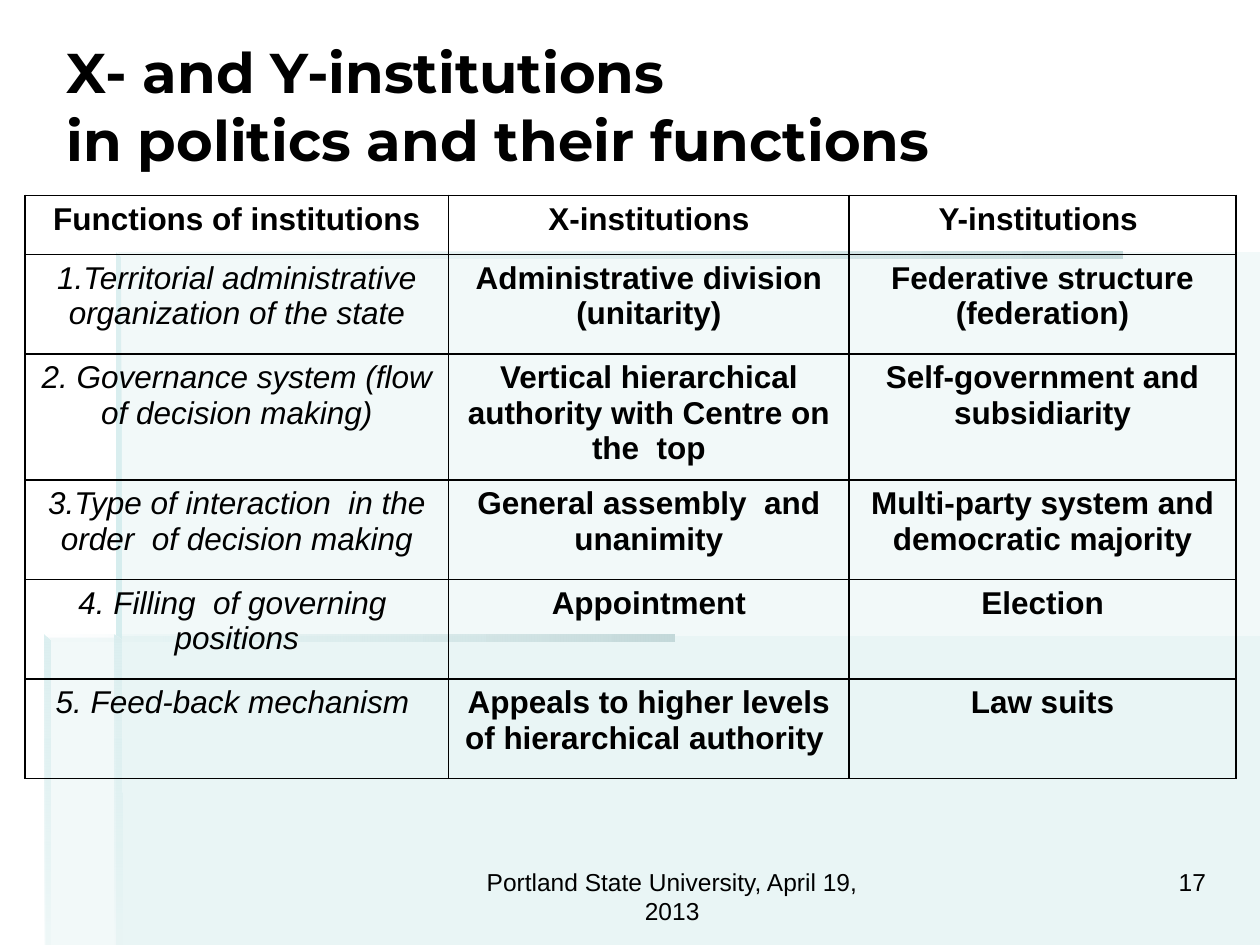
from dataclasses import dataclass

from lxml import etree
from pptx import Presentation
from pptx.dml.color import RGBColor
from pptx.enum.text import MSO_ANCHOR, PP_ALIGN
from pptx.oxml.ns import qn
from pptx.util import Inches, Pt

LEFT, CENTER, RIGHT = PP_ALIGN.LEFT, PP_ALIGN.CENTER, PP_ALIGN.RIGHT
TOP, MIDDLE = MSO_ANCHOR.TOP, MSO_ANCHOR.MIDDLE
WIDTH, HEIGHT = Inches(10), Inches(7.5)


@dataclass(frozen=True)
class Theme:
    ink: str = "000000"
    mist: str = "D6EDEE"
    pale: str = "DCEFF0"
    steel: str = "C4D9DA"
    title_font: str = "Montserrat"
    body_font: str = "Arial"
    title_size: int = 32
    table_size: int = 18
    footer_size: int = 14
    border: int = 1


THEME = Theme()
RIGHTWARD, DOWNWARD = 0, 270

COLUMNS = (33.6, 31.8, 30.7)
HEADER_ROW, BODY_ROW = 6.27, 10.53
ROWS = (
    ("Functions of institutions", "X-institutions", "Y-institutions "),
    ("1.Territorial administrative organization of the state",
     "Administrative division (unitarity)",
     "Federative structure (federation)"),
    ("2. Governance system (flow of decision making)",
     "Vertical hierarchical authority with Centre on the  top",
     "Self-government and subsidiarity"),
    ("3.Type of interaction  in the order  of decision making",
     "General assembly  and unanimity",
     "Multi-party system and democratic majority"),
    ("4. Filling  of governing  positions", "Appointment", "Election"),
    ("5. Feed-back mechanism ",
     "Appeals to higher levels of hierarchical authority ",
     "Law suits"),
)


def across(percent):
    return round(WIDTH * percent / 100)


def down(percent):
    return round(HEIGHT * percent / 100)


def box(x, y, w, h):
    return across(x), down(y), across(w), down(h)


def rectangle(x1, y1, x2, y2):
    return (x1, y1), (x1, y2), (x2, y2), (x2, y1)


def add_polygon(slide, points, colors, opacities, angle=RIGHTWARD):
    """Draw an outline-free shape; two colours make a gradient."""
    start, *rest = [(across(x), down(y)) for x, y in points]
    builder = slide.shapes.build_freeform(*start)
    builder.add_line_segments(rest, close=True)
    sp = builder.convert_to_shape()
    sp.shadow.inherit = False
    sp.line.fill.background()
    if len(colors) == 1:
        sp.fill.solid()
        sp.fill.fore_color.rgb = RGBColor.from_string(colors[0])
    else:
        sp.fill.gradient()
        sp.fill.gradient_angle = angle
        for stop, color in zip(sp.fill.gradient_stops, colors):
            stop.color.rgb = RGBColor.from_string(color)
    for clr, opacity in zip(sp._element.spPr.iter(qn("a:srgbClr")), opacities):
        if opacity < 100:
            etree.SubElement(clr, qn("a:alpha"), val=str(opacity * 1000))


def add_backdrop(slide):
    t = THEME
    lower_panel = rectangle(9.2, 67.33, 100, 100)
    upper_panel = ((9.4, 67.47), (3.6, 67.47), (3.6, 100), (100, 100),
                   (100, 26.67), (9.4, 26.67))
    for panel in (lower_panel, upper_panel):
        add_polygon(slide, panel, (t.mist,), (30,))

    upper_rule = rectangle(9.2, 26.67, 89.1, 27.33)
    upper_post = (9.2, 26.67), (9.2, 68), (9.7, 68), (9.6, 27.2)
    inner_post = (9.1, 100), (9.7, 100), (9.6, 67.73), (9.1, 67.2)
    lower_rule = rectangle(3.5, 67.2, 53.5, 67.87)
    outer_post = (3.5, 67.2), (3.5, 100), (4, 100), (4, 67.87)
    rule, post = (t.mist, t.steel), (t.pale, t.mist)
    for points, colors, opacities, angle in (
        (upper_rule, rule, (0, 100), RIGHTWARD),
        (upper_post, post, (100, 100), DOWNWARD),
        (inner_post, post, (100, 0), DOWNWARD),
        (lower_rule, rule, (0, 100), RIGHTWARD),
        (outer_post, post, (100, 10), DOWNWARD),
    ):
        add_polygon(slide, points, colors, opacities, angle)


def style(p, font, size, align, bold=False, italic=False):
    p.alignment = align
    p.font.name, p.font.size = font, Pt(size)
    p.font.bold, p.font.italic = bold, italic
    p.font.color.rgb = RGBColor.from_string(THEME.ink)


def add_text(slide, area, text, font, size, align, anchor=TOP, bold=False):
    tf = slide.shapes.add_textbox(*box(*area)).text_frame
    tf.word_wrap = True
    tf.vertical_anchor = anchor
    p = tf.paragraphs[0]
    p.text = text
    style(p, font, size, align, bold)


def add_borders(cell):
    tc_pr = cell._tc.get_or_add_tcPr()
    for side in ("lnL", "lnR", "lnT", "lnB"):
        ln = etree.SubElement(tc_pr, qn(f"a:{side}"), w=str(Pt(THEME.border)))
        fill = etree.SubElement(ln, qn("a:solidFill"))
        etree.SubElement(fill, qn("a:srgbClr"), val=THEME.ink)


def add_functions_table(slide):
    heights = [HEADER_ROW] + [BODY_ROW] * (len(ROWS) - 1)
    area = box(2, 20.67, sum(COLUMNS), sum(heights))
    table = slide.shapes.add_table(len(ROWS), len(COLUMNS), *area).table
    for column, width in zip(table.columns, COLUMNS):
        column.width = across(width)
    for r, (texts, height) in enumerate(zip(ROWS, heights)):
        table.rows[r].height = down(height)
        for c, text in enumerate(texts):
            cell = table.cell(r, c)
            add_borders(cell)
            cell.fill.background()
            cell.text = text
            is_function = r > 0 and c == 0
            style(cell.text_frame.paragraphs[0], THEME.body_font,
                  THEME.table_size, CENTER,
                  bold=not is_function, italic=is_function)


def main():
    prs = Presentation()
    prs.slide_width, prs.slide_height = WIDTH, HEIGHT
    slide = prs.slides.add_slide(prs.slide_layouts[6])
    add_backdrop(slide)
    add_text(slide, (4.3, 2.8, 90, 16.67),
             "X- and Y-institutions \vin politics and their functions",
             THEME.title_font, THEME.title_size, LEFT, MIDDLE, bold=True)
    add_functions_table(slide)
    for x, w, text, align in (
        (75.9, 20.8, "17", RIGHT),
        (37.5, 31.7, "Portland State University, April 19, 2013", CENTER),
    ):
        add_text(slide, (x, 91.07, w, 6.93), text,
                 THEME.body_font, THEME.footer_size, align)
    prs.save("out.pptx")


if __name__ == "__main__":
    main()
